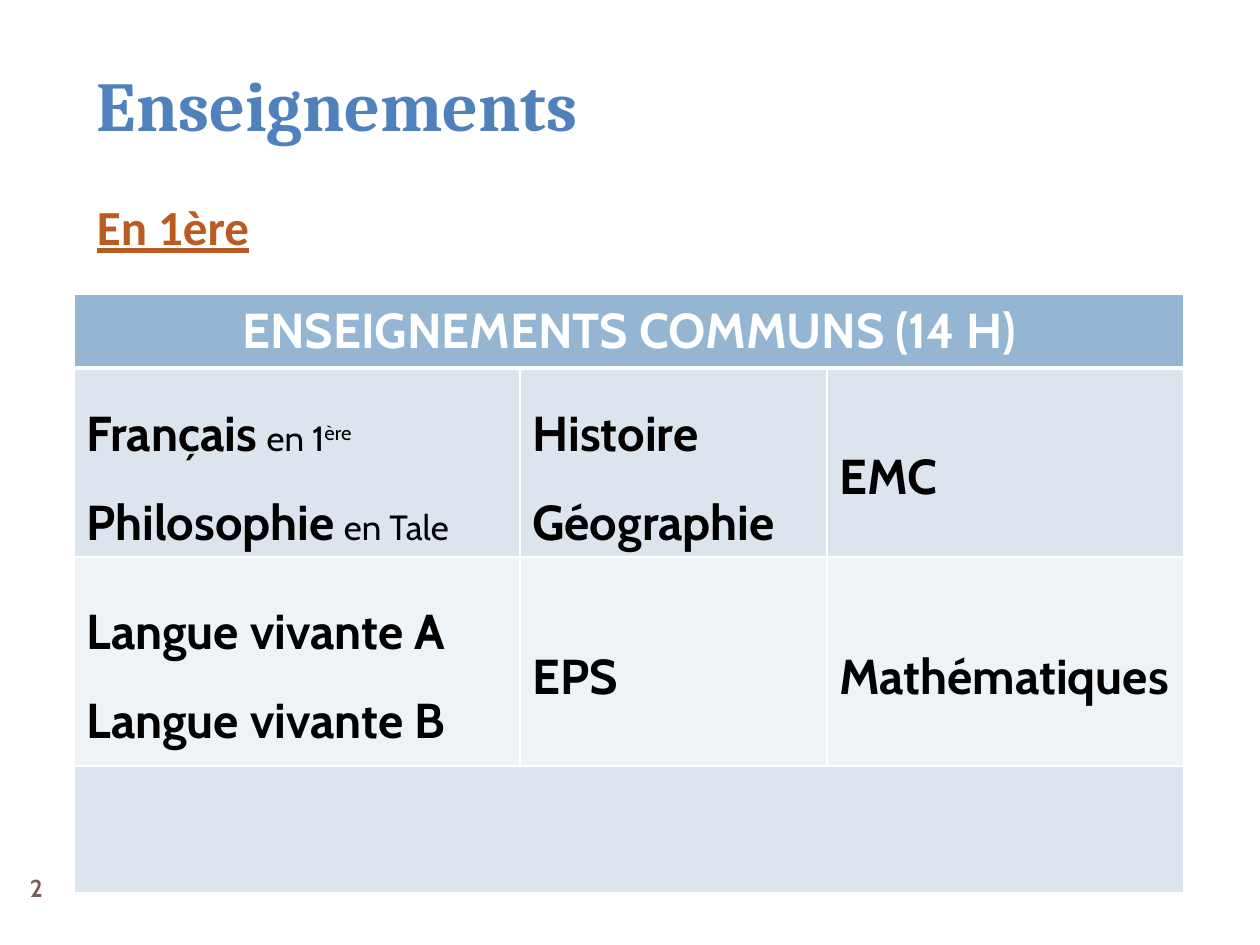
from lxml import etree
from pptx import Presentation
from pptx.dml.color import RGBColor
from pptx.enum.text import MSO_ANCHOR, PP_ALIGN
from pptx.oxml.ns import qn
from pptx.util import Pt

MIDDLE = MSO_ANCHOR.MIDDLE
LEFT, CENTER = PP_ALIGN.LEFT, PP_ALIGN.CENTER
EMU_PER_PX = 914400 / 126
COLORS = {
    "title": "4F81BD", "subtitle": "B95B22", "number": "775F55",
    "header": "94B6D2", "band": "DCE5EE", "light": "EEF3F7",
    "white": "FFFFFF", "black": "000000",
}


def px(length):
    return round(length * EMU_PER_PX)


def rgb(name):
    return RGBColor.from_string(COLORS[name])


class SlideBuilder:
    font = "Cabin"

    def __init__(self, slide):
        self.slide = slide

    def run(self, paragraph, text, size=28, color="black", bold=True,
            font=None, underline=None, raised=False):
        run = paragraph.add_run()
        run.text = text
        run.font.name = font or self.font
        run.font.size = Pt(size)
        run.font.bold = bold
        run.font.underline = underline
        run.font.color.rgb = rgb(color)
        if raised:
            run.font._element.set("baseline", "30000")

    def text_box(self, left, top, width, height, margins=(13, 6, 13, 6)):
        box = self.slide.shapes.add_textbox(px(left), px(top), px(width), px(height))
        frame = box.text_frame
        frame.word_wrap = True
        frame.vertical_anchor = MIDDLE
        (frame.margin_left, frame.margin_top,
         frame.margin_right, frame.margin_bottom) = map(px, margins)
        return frame

    def table(self, left, top, columns, rows):
        shape = self.slide.shapes.add_table(
            len(rows), len(columns), px(left), px(top), px(sum(columns)), px(sum(rows)))
        table = shape.table
        for column, width in zip(table.columns, columns):
            column.width = px(width)
        for row, height in zip(table.rows, rows):
            row.height = px(height)
        return table

    def border(self, cell, side, points):
        line = etree.SubElement(cell._tc.get_or_add_tcPr(), qn("a:ln" + side),
                                w=str(Pt(points)))
        fill = etree.SubElement(line, qn("a:solidFill"))
        etree.SubElement(fill, qn("a:srgbClr"), val=COLORS["white"])

    def cell_style(self, cell, fill, top=1, bottom=1):
        for side, points in (("L", 1), ("R", 1), ("T", top), ("B", bottom)):
            self.border(cell, side, points)
        cell.fill.solid()
        cell.fill.fore_color.rgb = rgb(fill)
        cell.vertical_anchor = MIDDLE

    def cell_text(self, cell, lines, color="black", align=LEFT, spacing=1.5):
        frame = cell.text_frame
        for index, runs in enumerate(lines):
            paragraph = frame.add_paragraph() if index else frame.paragraphs[0]
            paragraph.alignment = align
            paragraph.line_spacing = spacing
            for text, style in runs:
                self.run(paragraph, text, color=color, **style)


def main():
    presentation = Presentation()
    presentation.slide_width, presentation.slide_height = px(1260), px(945)
    builder = SlideBuilder(presentation.slides.add_slide(presentation.slide_layouts[6]))

    # Title and class level
    frame = builder.text_box(84, 43, 1101, 213, margins=(13, 18, 13, 0))
    builder.run(frame.paragraphs[0], "Enseignements", 40, "title", font="Cambria")
    level = frame.add_paragraph()
    level.space_before = Pt(29)
    builder.run(level, "En 1ère", 28, "subtitle", font="Calibri", underline=True)

    # Table of common subjects
    table = builder.table(74, 294, columns=(446, 307, 357), rows=(74, 188, 209, 127))
    for row_index, fill in enumerate(("header", "band", "light", "band")):
        for cell in table.rows[row_index].cells:
            builder.cell_style(cell, fill, top=3 if row_index == 1 else 1,
                               bottom=3 if row_index == 0 else 1)
    for row_index in (0, 3):
        table.cell(row_index, 0).merge(table.cell(row_index, 2))

    builder.cell_text(table.cell(0, 0), [[("ENSEIGNEMENTS COMMUNS (14 H)", {})]],
                      color="white", align=CENTER, spacing=1.0)

    space = (" ", {"size": 24})
    small = {"size": 20, "bold": False}
    subjects = [
        [
            [[("Français", {}), space, ("en 1", small), ("ère", {**small, "raised": True})],
             [("Philosophie", {}), space, ("en Tale", small)]],
            [[("Histoire", {})], [("Géographie", {})]],
            [[("EMC", {})]],
        ],
        [
            [[("Langue vivante A", {})], [("Langue vivante B", {})]],
            [[("EPS", {})]],
            [[("Mathématiques", {})]],
        ],
    ]
    for row_index, row in enumerate(subjects, start=1):
        for column_index, lines in enumerate(row):
            builder.cell_text(table.cell(row_index, column_index), lines)

    # Slide number
    number = builder.text_box(0, 861, 73, 53).paragraphs[0]
    number.alignment = CENTER
    builder.run(number, "2", 14, "number")

    presentation.save("out.pptx")


if __name__ == "__main__":
    main()
